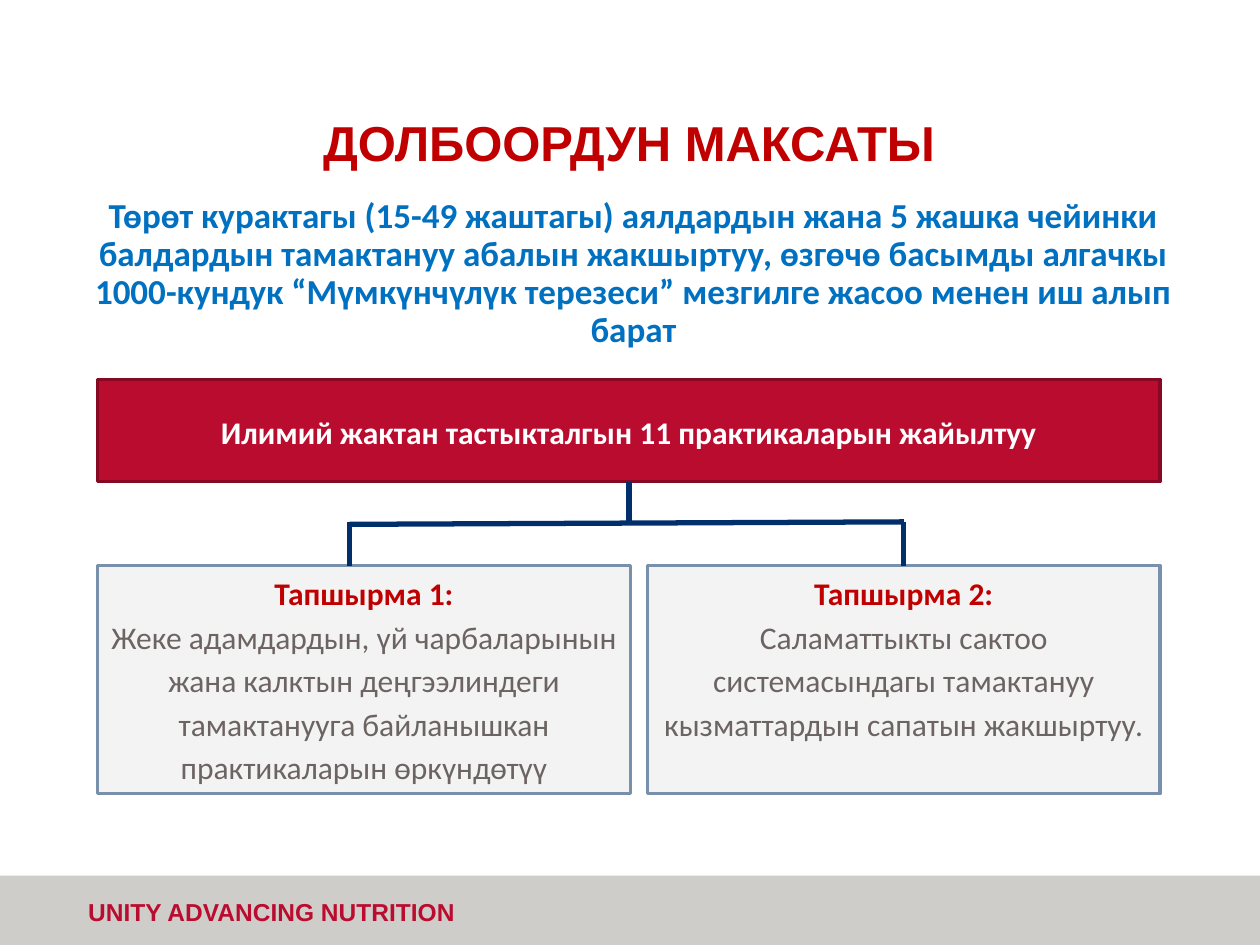
from dataclasses import dataclass

from lxml import etree
from pptx import Presentation
from pptx.dml.color import RGBColor
from pptx.enum.shapes import MSO_CONNECTOR, MSO_SHAPE
from pptx.enum.text import MSO_ANCHOR, PP_ALIGN
from pptx.oxml.ns import qn
from pptx.util import Cm, Pt

RECTANGLE = MSO_SHAPE.RECTANGLE
STRAIGHT = MSO_CONNECTOR.STRAIGHT
TOP, MIDDLE = MSO_ANCHOR.TOP, MSO_ANCHOR.MIDDLE
LEFT, CENTER = PP_ALIGN.LEFT, PP_ALIGN.CENTER
SIDE_TOP, SIDE_BOTTOM = 0, 2


@dataclass(frozen=True)
class Theme:
    heading_font: str = "Arial"
    body_font: str = "Calibri"
    title_size: int = 28
    goal_size: int = 20
    box_size: int = 18
    footer_size: int = 14
    accent: str = "C00000"
    goal: str = "0070C0"
    brand: str = "BA0C2F"
    brand_edge: str = "870822"
    panel: str = "F3F3F3"
    panel_edge: str = "7990AC"
    body: str = "6C6463"
    link: str = "002F6C"
    band: str = "CFCDC9"
    white: str = "FFFFFF"
    edge_width: int = 2
    link_width: int = 3


THEME = Theme()
TASKS = [
    ("Тапшырма 1:", "Жеке адамдардын, үй чарбаларынын жана калктын деңгээлиндеги "
                    "тамактанууга байланышкан практикаларын өркүндөтүү"),
    ("Тапшырма 2:", "Саламаттыкты сактоо системасындагы тамактануу "
                    "кызматтардын сапатын жакшыртуу."),
]


def write(para, text, size, color, font=THEME.body_font, bold=True, align=CENTER, spacing=1.0):
    para.text = text
    para.alignment = align
    para.line_spacing = spacing
    para.font.name = font
    para.font.size = Pt(size)
    para.font.bold = bold
    para.font.color.rgb = RGBColor.from_string(color)


def set_frame(shape, anchor):
    frame = shape.text_frame
    frame.word_wrap = True
    frame.vertical_anchor = anchor
    return frame


def add_text_box(page, left, top, width, height, anchor=TOP):
    box = page.shapes.add_textbox(Cm(left), Cm(top), Cm(width), Cm(height))
    return set_frame(box, anchor)


def add_panel(page, left, top, width, height, fill, edge=None, anchor=MIDDLE):
    panel = page.shapes.add_shape(RECTANGLE, Cm(left), Cm(top), Cm(width), Cm(height))
    panel.shadow.inherit = False
    panel.fill.solid()
    panel.fill.fore_color.rgb = RGBColor.from_string(fill)
    if edge:
        panel.line.color.rgb = RGBColor.from_string(edge)
        panel.line.width = Pt(THEME.edge_width)
    else:
        panel.line.fill.background()
    set_frame(panel, anchor)
    return panel


def add_link(page, start_x, start_y, end_x, end_y):
    link = page.shapes.add_connector(STRAIGHT, Cm(start_x), Cm(start_y), Cm(end_x), Cm(end_y))
    link.line.color.rgb = RGBColor.from_string(THEME.link)
    link.line.width = Pt(THEME.link_width)
    etree.SubElement(link._element.spPr, qn("a:effectLst"))
    return link


def add_footer(page, left, top, width, height):
    add_panel(page, left, top, width, height, THEME.band)
    frame = add_text_box(page, left + 1.78, top + 0.43, 11.56, 0.61, MIDDLE)
    frame.margin_left = frame.margin_right = frame.margin_top = frame.margin_bottom = 0
    write(frame.paragraphs[0], "UNITY ADVANCING NUTRITION", THEME.footer_size, THEME.brand,
          THEME.heading_font, align=LEFT)


def add_header(page, left, top, width):
    title = add_text_box(page, left, top, width, 2.39, MIDDLE)
    write(title.paragraphs[0], "ДОЛБООРДУН МАКСАТЫ", THEME.title_size, THEME.accent,
          THEME.heading_font, spacing=0.9)
    goal = add_text_box(page, left, top + 2.13, width, 9.42)
    goal.margin_left = Cm(0.43)
    write(goal.paragraphs[0],
          "Төрөт курактагы (15-49 жаштагы) аялдардын жана 5 жашка чейинки балдардын "
          "тамактануу абалын жакшыртуу, өзгөчө басымды алгачкы 1000-кундук "
          "“Мүмкүнчүлүк терезеси” мезгилге жасоо менен иш алып барат",
          THEME.goal_size, THEME.goal, spacing=0.9)


def add_task(page, left, top, width, height, heading, detail):
    panel = add_panel(page, left, top, width, height, THEME.panel, THEME.panel_edge, TOP)
    frame = panel.text_frame
    write(frame.paragraphs[0], heading, THEME.box_size, THEME.accent, spacing=1.07)
    write(frame.add_paragraph(), detail, THEME.box_size, THEME.body, bold=False, spacing=1.15)
    return panel


def add_task_tree(page, left, top, width, height):
    banner_height, task_height = 2.06, 4.6
    first_width, second_width = 10.74, 10.34
    task_top = top + height - task_height
    bar_y = top + 2.87
    center = left + width / 2
    second_left = left + width - second_width
    first_x, second_x = left + 5.08, second_left + second_width / 2

    banner = add_panel(page, left, top, width, banner_height, THEME.brand, THEME.brand_edge)
    write(banner.text_frame.paragraphs[0], "Илимий жактан тастыкталгын 11 практикаларын жайылтуу",
          THEME.box_size, THEME.white, spacing=1.07)
    add_task(page, left, task_top, first_width, task_height, *TASKS[0])
    second = add_task(page, second_left, task_top, second_width, task_height, *TASKS[1])

    add_link(page, first_x, bar_y + 0.05, second_x, bar_y)
    add_link(page, first_x, bar_y, first_x, task_top)
    trunk = add_link(page, center, top + banner_height, center, bar_y)
    trunk.begin_connect(banner, SIDE_BOTTOM)
    drop = add_link(page, second_x, bar_y, second_x, task_top)
    drop.end_connect(second, SIDE_TOP)


def main():
    deck = Presentation()
    deck.slide_width, deck.slide_height = Cm(25.4), Cm(19.05)
    page = deck.slides.add_slide(deck.slide_layouts[6])
    add_footer(page, 0, 17.65, 25.4, 1.4)
    add_header(page, 1.25, 1.75, 22.86)
    add_task_tree(page, 1.97, 7.65, 21.42, 8.35)
    deck.save("out.pptx")


if __name__ == "__main__":
    main()
